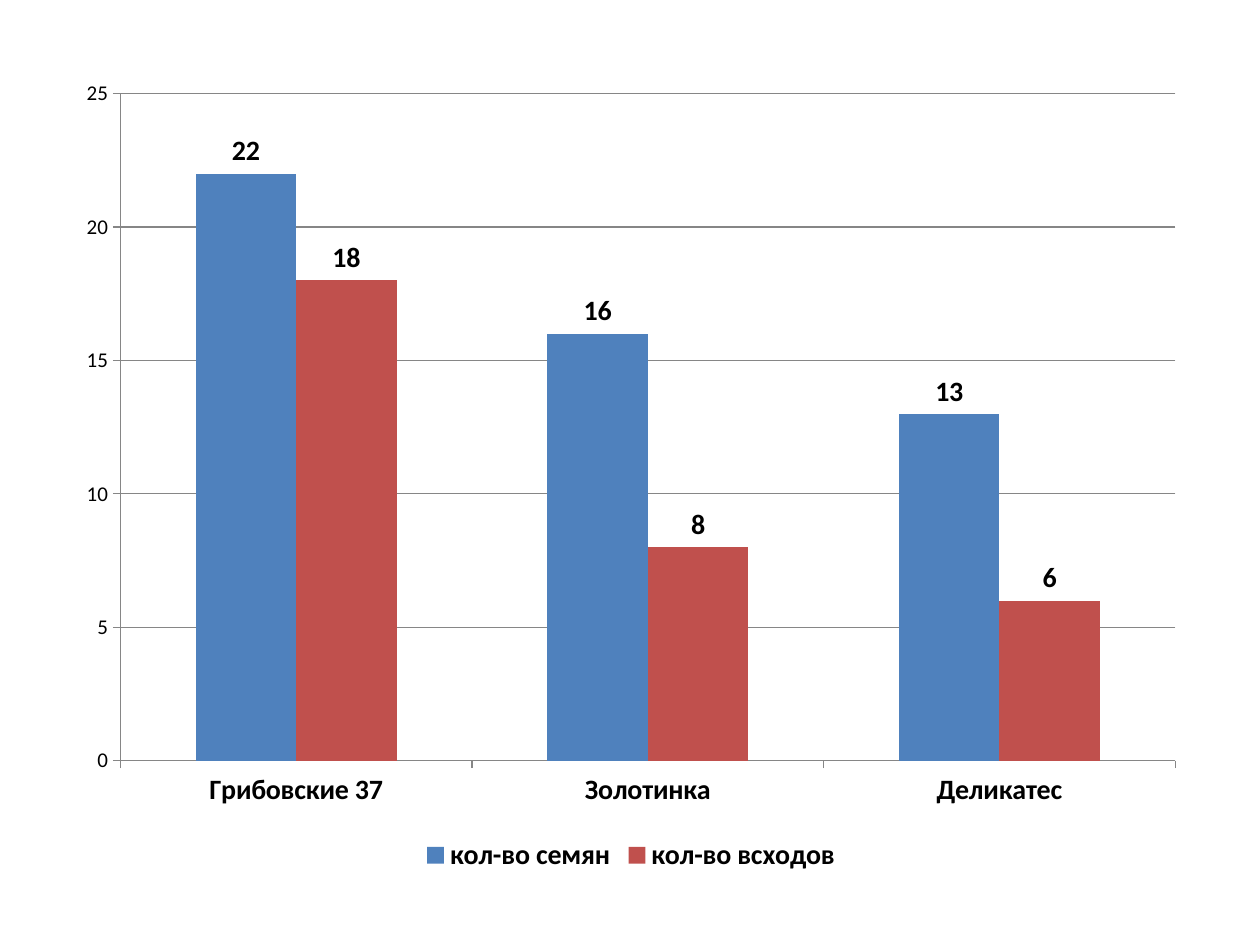
from pptx import Presentation
from pptx import util as u
from pptx.chart import data
from pptx.dml.color import RGBColor
from pptx.enum import chart as kinds

PX = 914400 / 126


def px(length):
    return u.Emu(round(length * PX))


def colour(hex_string):
    return RGBColor.from_string(hex_string)


def set_font(font, size, bold):
    formats = {"name": "Calibri", "size": u.Pt(size), "bold": bold}
    for name, value in formats.items():
        setattr(font, name, value)
    font.color.rgb = colour("000000")


deck = Presentation()
deck.slide_width, deck.slide_height = px(1260), px(945)
page = deck.slides.add_slide(deck.slide_layouts[6])

counts = data.CategoryChartData()
counts.categories = ["Грибовские 37", "Золотинка", "Деликатес"]
counts.add_series("кол-во семян", [22, 16, 13])
counts.add_series("кол-во всходов", [18, 8, 6])

chart = page.shapes.add_chart(
    kinds.XL_CHART_TYPE.COLUMN_CLUSTERED, px(64), px(65), px(1134), px(813), counts
).chart
chart.has_title = False
set_font(chart.font, 10, False)

plot = chart.plots[0]
plot.gap_width, plot.overlap, plot.vary_by_categories = 150, 0, False
for series, fill in zip(plot.series, ["4F81BD", "C0504D"]):
    series.format.fill.solid()
    series.format.fill.fore_color.rgb = colour(fill)
    labels = series.data_labels
    labels.show_value = True
    labels.position = kinds.XL_LABEL_POSITION.OUTSIDE_END
    set_font(labels.font, 16, True)

values = chart.value_axis
values.minimum_scale, values.maximum_scale, values.major_unit = 0, 25, 5
values.has_major_gridlines = True
for axis, size, bold in [(chart.category_axis, 16, True), (values, 12, False)]:
    axis.major_tick_mark = kinds.XL_TICK_MARK.OUTSIDE
    axis.minor_tick_mark = kinds.XL_TICK_MARK.NONE
    set_font(axis.tick_labels.font, size, bold)
for lines in [chart.category_axis, values, values.major_gridlines]:
    lines.format.line.color.rgb = colour("868686")
    lines.format.line.width = u.Pt(0.75)

chart.has_legend = True
chart.legend.position = kinds.XL_LEGEND_POSITION.BOTTOM
chart.legend.include_in_layout = False
set_font(chart.legend.font, 16, True)

deck.save("out.pptx")
